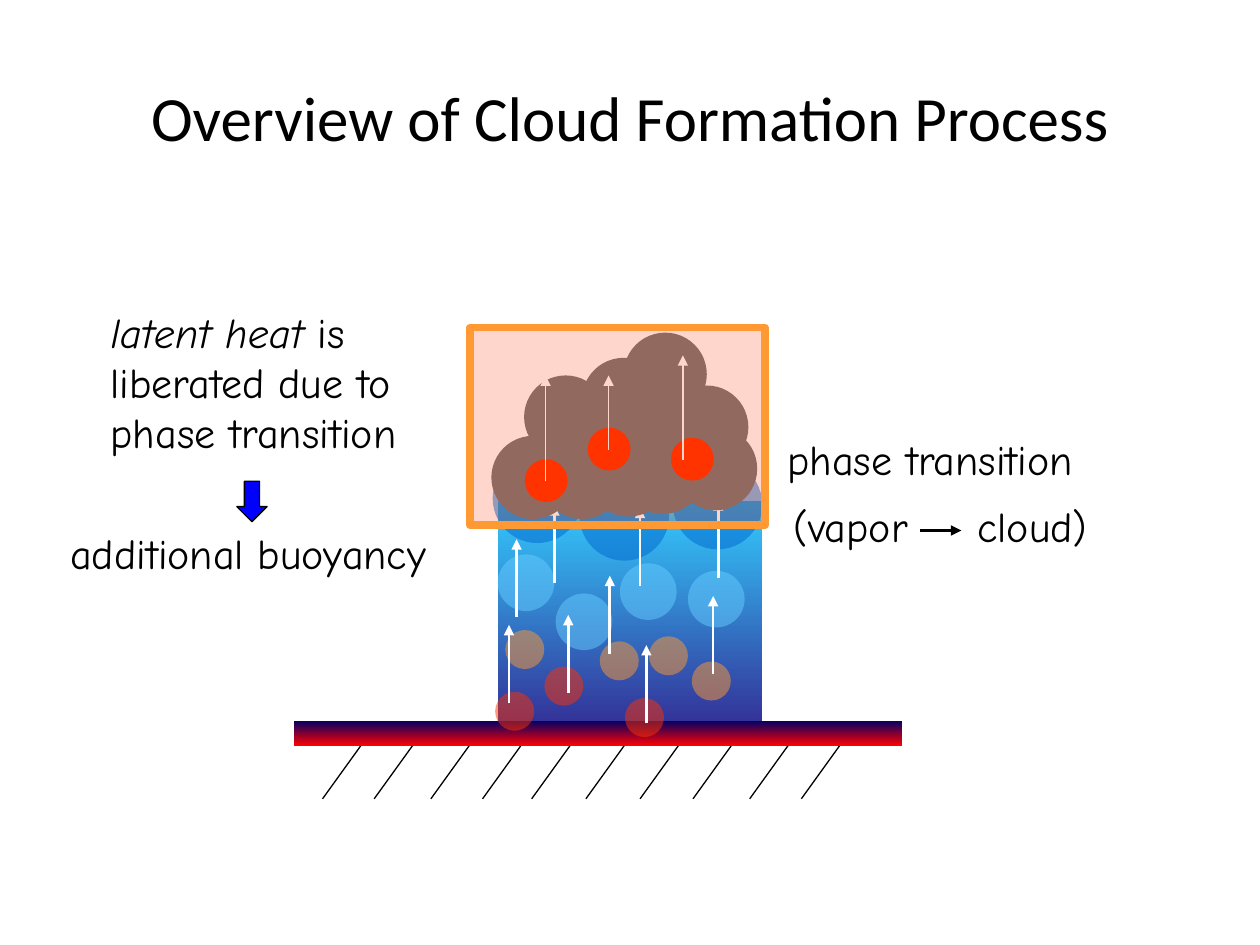
from lxml import etree
from pptx import Presentation
from pptx.dml.color import RGBColor
from pptx.enum.shapes import MSO_CONNECTOR, MSO_SHAPE
from pptx.enum.text import MSO_ANCHOR, PP_ALIGN
from pptx.oxml.ns import qn
from pptx.util import Inches, Pt

RECT, OVAL, DOWN = MSO_SHAPE.RECTANGLE, MSO_SHAPE.OVAL, MSO_SHAPE.DOWN_ARROW
STRAIGHT = MSO_CONNECTOR.STRAIGHT
LEFT, CENTER = PP_ALIGN.LEFT, PP_ALIGN.CENTER
TOP, MIDDLE = MSO_ANCHOR.TOP, MSO_ANCHOR.MIDDLE

prs = Presentation()
prs.slide_width, prs.slide_height = Inches(10), Inches(7.5)
s = prs.slides.add_slide(prs.slide_layouts[6])


def color(value):
    return RGBColor.from_string(value)


def add_shape(kind, x, y, w, h, fill, alpha=None, line=None, width=0.75):
    """Add a shape; a pair of colours as fill gives a downward gradient."""
    sp = s.shapes.add_shape(kind, Inches(x), Inches(y), Inches(w), Inches(h))
    sp.shadow.inherit = False
    if isinstance(fill, tuple):
        sp.fill.gradient()
        sp.fill.gradient_angle = 270
        for stop, position, value in zip(sp.fill.gradient_stops, (0, 1), fill):
            stop.position = position
            stop.color.rgb = color(value)
    else:
        sp.fill.solid()
        sp.fill.fore_color.rgb = color(fill)
    if alpha:
        rgb = sp.fill._xPr.find(".//" + qn("a:srgbClr"))
        etree.SubElement(rgb, qn("a:alpha"), val=str(alpha * 1000))
    if line:
        sp.line.color.rgb = color(line)
        sp.line.width = Pt(width)
    else:
        sp.line.fill.background()
    return sp


def add_line(x1, y1, x2, y2, line, width, arrow=False):
    c = s.shapes.add_connector(STRAIGHT, Inches(x1), Inches(y1), Inches(x2), Inches(y2))
    c.line.color.rgb = color(line)
    c.line.width = Pt(width)
    if arrow:
        etree.SubElement(c.line._get_or_add_ln(), qn("a:tailEnd"), type="triangle")
    etree.SubElement(c._element.spPr, qn("a:effectLst"))


def add_text(lines, x, y, w, h, size=24, font="Comic Neue", align=LEFT,
             anchor=TOP, fill=None, italic=""):
    """Add a text box, one paragraph a line; italic starts the first line."""
    sp = s.shapes.add_textbox(Inches(x), Inches(y), Inches(w), Inches(h))
    if fill:
        sp.fill.solid()
        sp.fill.fore_color.rgb = color(fill)
    tf = sp.text_frame
    tf.word_wrap = True
    tf.vertical_anchor = anchor
    for i, text in enumerate(lines):
        p = tf.add_paragraph() if i else tf.paragraphs[0]
        p.alignment = align
        for part, slanted in ((italic if i == 0 else "", True), (text, False)):
            if part:
                r = p.add_run()
                r.text = part
                r.font.size, r.font.name = Pt(size), font
                r.font.italic = slanted
                r.font.color.rgb = color("000000")
    return sp


# Hatched ground
add_line(2.35, 5.91, 7.06, 5.91, "000000", 1.5)
for x in (2.87, 3.28, 3.73, 4.14, 4.53, 4.96, 5.39, 5.81, 6.26, 6.67):
    add_line(x, 5.91, x - 0.31, 6.34, "000000", 0.75)

# Air column and heated surface
add_shape(RECT, 3.95, 3.98, 2.1, 1.75, ("33CCFF", "333399"))
add_shape(RECT, 2.33, 5.72, 4.83, 0.2, ("000066", "FF0000"))

# Rising parcels: hot, warm, saturated, cool
parcels = [
    ("FF3300", 0.31, [(3.93, 5.49), (4.32, 5.29), (4.96, 5.54)]),
    ("FF9933", 0.31, [(4.01, 5), (4.76, 5.09), (5.15, 5.05), (5.49, 5.25)]),
    ("0066CC", 0.71, [(3.91, 3.6), (4.6, 3.74), (5.34, 3.65)]),
    ("66CCFF", 0.45, [(3.95, 4.4), (4.41, 4.71), (4.92, 4.47), (5.46, 4.53)]),
]
for fill, size, spots in parcels:
    for x, y in spots:
        add_shape(OVAL, x, y, size, size, fill, alpha=50)

# Updraft arrows
for x, y in ((5.13, 5.74), (4.04, 5.58), (4.51, 5.5), (5.66, 5.35), (4.84, 5.19),
             (4.4, 4.63), (4.1, 4.9), (5.08, 4.65), (5.7, 4.59)):
    add_line(x, y, x, y - 0.62, "FFFFFF", 1.5, arrow=True)

# Cloud
for x, y in ((3.9, 3.46), (4.29, 3.46), (5.35, 3.39), (4.66, 3.44), (4.93, 3.42),
             (4.16, 2.98), (4.6, 3.08), (4.99, 3.06), (4.62, 2.84), (5.28, 3.06),
             (4.95, 2.64)):
    add_shape(OVAL, x, y, 0.66, 0.66, "777777")

# Latent heat sources and their lift
for x, y in ((4.17, 3.65), (4.67, 3.4), (5.33, 3.48)):
    add_shape(OVAL, x, y, 0.33, 0.33, "FF3300", line="FF3300")
for x, y, tip in ((4.33, 3.82, 2.98), (4.83, 3.57, 2.98), (5.42, 3.65, 2.82)):
    add_line(x, y, x, tip, "FFFFFF", 0.75, arrow=True)

# Title and labels
add_text(["Overview of Cloud Formation Process"], 0.5, 0.3, 9, 1.25, size=36,
         font="Calibri", align=CENTER, anchor=MIDDLE)
add_text(["phase transition"], 6.15, 3.39, 2.73, 0.5, fill="FFFFFF")
add_text(["additional buoyancy"], 0.46, 4.14, 3.26, 0.5, fill="FFFFFF")
sp = add_shape(DOWN, 1.88, 3.82, 0.24, 0.32, "0000FF", line="000000")
sp.adjustments[0] = sp.adjustments[1] = 0.5
add_text(["is", "liberated due to", "phase transition"], 0.78, 2.38, 2.74, 1.31,
         fill="FFFFFF", italic="latent heat ")

# Vapor to cloud, with a tab stop that leaves room for the arrow
sp = add_text(["(vapor\tcloud)"], 6.2, 3.92, 2.62, 0.51)
pPr = sp.text_frame.paragraphs[0]._p.get_or_add_pPr()
tabs = etree.SubElement(pPr, qn("a:tabLst"))
etree.SubElement(tabs, qn("a:tab"), pos=str(Inches(1.46)), algn="l")
add_line(7.3, 4.21, 7.63, 4.21, "000000", 1.5, arrow=True)

# Condensation zone
add_shape(RECT, 3.73, 2.6, 2.34, 1.57, "FF3300", alpha=20, line="FF9933", width=4.5)

prs.save("out.pptx")
